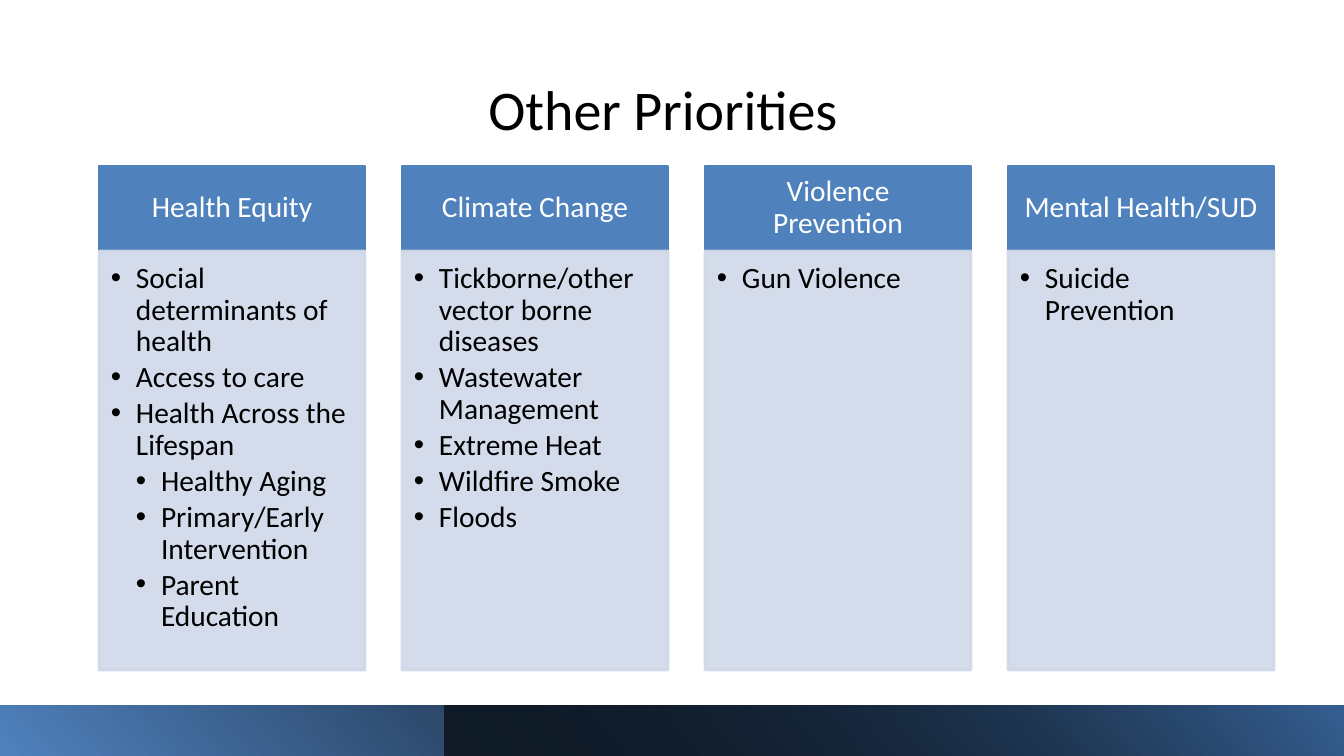
from lxml.etree import SubElement
from pptx import Presentation
from pptx.dml.color import RGBColor
from pptx.enum.shapes import MSO_SHAPE
from pptx.enum.text import MSO_ANCHOR as Anchor, PP_ALIGN as Align
from pptx.oxml.ns import qn
from pptx.util import Emu, Pt

TITLE = "Other Priorities"
PRIORITIES = [
    ("Health Equity", [
        (1, "Social determinants of health"),
        (1, "Access to care"),
        (1, "Health Across the Lifespan"),
        (2, "Healthy Aging"),
        (2, "Primary/Early Intervention"),
        (2, "Parent Education"),
    ]),
    ("Climate Change", [
        (1, "Tickborne/other vector borne diseases"),
        (1, "Wastewater Management"),
        (1, "Extreme Heat"),
        (1, "Wildfire Smoke"),
        (1, "Floods"),
    ]),
    ("Violence Prevention", [(1, "Gun Violence")]),
    ("Mental Health/SUD", [(1, "Suicide Prevention")]),
]
FOOTER_BARS = [
    ((0, 706, 1344, 50), [(0, "4F81BD", 100), (0.78, "000000", 100)]),
    ((445, 706, 899, 50), [(0, "000000", 63), (1, "376092", 100)]),
]
FONT = "Calibri"
BLUE, PALE, BLACK, WHITE = "4F81BD", "D0D8E8", "000000", "FFFFFF"
COLUMN_LEFT, COLUMN_STEP, COLUMN_WIDTH = 99, 303, 266
HEADER_TOP, HEADER_HEIGHT = 166, 84
PANEL_TOP, PANEL_HEIGHT = 251, 419
INDENT = 25


def px(length):
    return Emu(round(length * 914400 / 100.8))


def color(text):
    return RGBColor.from_string(text)


def set_alpha(parent, percent):
    for node in list(parent.iter(qn("a:srgbClr"))):
        SubElement(node, qn("a:alpha"), val=str(percent * 1000))


def add_box(page, bounds):
    box = page.shapes.add_shape(MSO_SHAPE.RECTANGLE, *map(px, bounds))
    box.shadow.inherit = False
    return box


def add_filled_box(page, bounds, fill):
    box = add_box(page, bounds)
    box.fill.solid()
    box.fill.fore_color.rgb = color(fill)
    box.line.color.rgb = color(fill)
    box.line.width = Pt(2)
    return box


def set_frame(frame, anchor, left, top, right, bottom):
    frame.word_wrap = True
    frame.vertical_anchor = anchor
    frame.margin_left, frame.margin_top = px(left), px(top)
    frame.margin_right, frame.margin_bottom = px(right), px(bottom)


def format_para(para, size, ink, align):
    para.alignment = align
    for span in para.runs:
        span.font.name = FONT
        span.font.size = Pt(size)
        span.font.color.rgb = color(ink)


def add_bullet(para, level):
    props = para._p.get_or_add_pPr()
    props.set("marL", str(px(INDENT * level)))
    props.set("indent", str(-px(INDENT)))
    SubElement(props, qn("a:buFont"), typeface="Arial")
    SubElement(props, qn("a:buChar"), char="•")


def add_header(page, left, heading):
    bounds = (left, HEADER_TOP, COLUMN_WIDTH, HEADER_HEIGHT)
    frame = add_filled_box(page, bounds, BLUE).text_frame
    set_frame(frame, Anchor.MIDDLE, 16, 9, 16, 9)
    frame.text = heading
    para = frame.paragraphs[0]
    para.line_spacing = 0.9
    format_para(para, 21, WHITE, Align.CENTER)


def add_panel(page, left, items):
    bounds = (left, PANEL_TOP, COLUMN_WIDTH, PANEL_HEIGHT)
    panel = add_filled_box(page, bounds, PALE)
    set_alpha(panel._element.spPr, 90)
    frame = panel.text_frame
    set_frame(frame, Anchor.TOP, 12, 12, 16, 18)
    frame.text = "\n".join(text for level, text in items)
    for para, (level, text) in zip(frame.paragraphs, items):
        para.level = level
        para.line_spacing = 0.9
        para.space_after = Pt(3)
        format_para(para, 21, BLACK, Align.LEFT)
        add_bullet(para, level)


def add_footer_bar(page, bounds, stops):
    bar = add_box(page, bounds)
    bar.line.fill.background()
    bar.fill.gradient()
    bar.fill.gradient_angle = 40
    for stop, (position, tint, opacity) in zip(bar.fill.gradient_stops, stops):
        stop.position = position
        stop.color.rgb = color(tint)
        if opacity < 100:
            set_alpha(stop._gs, opacity)


def add_title(page):
    title = page.shapes.title
    title.left, title.top, title.width, title.height = map(px, (129, -34, 1068, 181))
    frame = title.text_frame
    frame.text = TITLE
    frame.word_wrap = True
    frame.vertical_anchor = Anchor.BOTTOM
    format_para(frame.paragraphs[0], 40, BLACK, Align.CENTER)


def main():
    deck = Presentation()
    deck.slide_width, deck.slide_height = px(1344), px(756)
    page = deck.slides.add_slide(deck.slide_layouts[5])
    add_title(page)
    for index, (heading, items) in enumerate(PRIORITIES):
        left = COLUMN_LEFT + index * COLUMN_STEP
        add_header(page, left, heading)
        add_panel(page, left, items)
    for bounds, stops in FOOTER_BARS:
        add_footer_bar(page, bounds, stops)
    deck.save("out.pptx")


if __name__ == "__main__":
    main()
